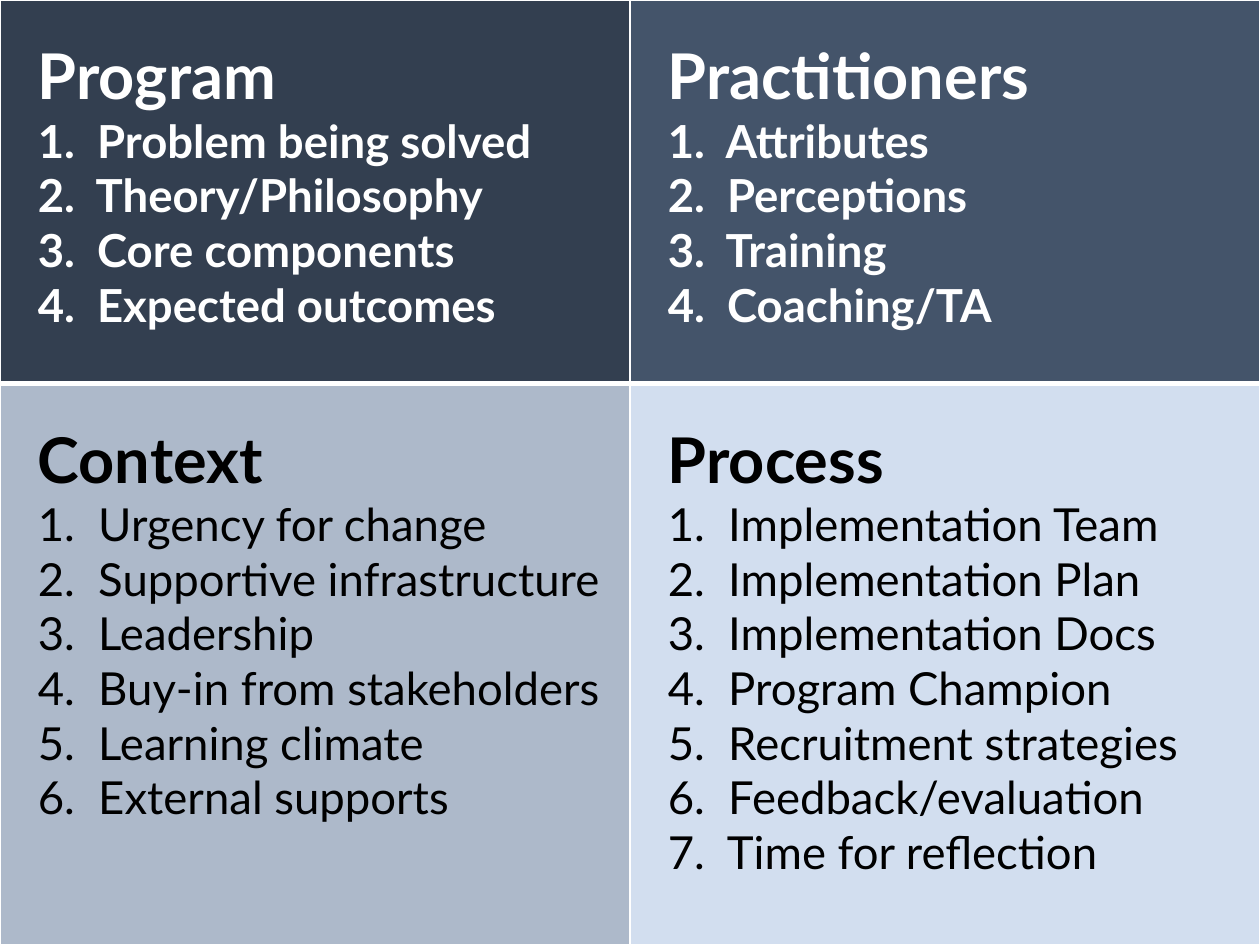
from lxml.etree import SubElement
from pptx import Presentation
from pptx.dml.color import RGBColor
from pptx.oxml.ns import qn
from pptx.util import Pt

WHITE = RGBColor(0xFF, 0xFF, 0xFF)
BLACK = RGBColor(0x00, 0x00, 0x00)
NAVY = RGBColor(0x33, 0x3F, 0x50)
SLATE = RGBColor(0x44, 0x54, 0x6A)
GREY_BLUE = RGBColor(0xAD, 0xB9, 0xCA)
PALE_BLUE = RGBColor(0xD2, 0xDE, 0xEF)

FONT = "Lato"
SLIDE_WIDTH, SLIDE_HEIGHT = 720, 540
ROW_HEIGHTS = (219, 321)
THIN, THICK = 1, 3

# Each quadrant: heading, items, fill, text colour, bold items
QUADRANTS = [
    [
        ("Program",
         ["Problem being solved", "Theory/Philosophy", "Core components",
          "Expected outcomes"],
         NAVY, WHITE, True),
        ("Practitioners",
         ["Attributes", "Perceptions", "Training", "Coaching/TA"],
         SLATE, WHITE, True),
    ],
    [
        ("Context",
         ["Urgency for change", "Supportive infrastructure", "Leadership",
          "Buy-in from stakeholders", "Learning climate", "External supports"],
         GREY_BLUE, BLACK, False),
        ("Process",
         ["Implementation Team", "Implementation Plan", "Implementation Docs",
          "Program Champion", "Recruitment strategies", "Feedback/evaluation",
          "Time for reflection"],
         PALE_BLUE, BLACK, False),
    ],
]


def write_text(paragraph, text, *, size, color, bold=False):
    run = paragraph.add_run()
    run.text = text
    run.font.name = FONT
    run.font.size = Pt(size)
    run.font.bold = bold
    run.font.color.rgb = color


def set_borders(cell, **widths):
    """Draw white cell borders; the schema wants them before the fill."""
    properties = cell._tc.get_or_add_tcPr()
    for position, (side, width) in enumerate(widths.items()):
        line = SubElement(properties, qn(f"a:ln{side}"), w=str(Pt(width)))
        fill = SubElement(line, qn("a:solidFill"))
        SubElement(fill, qn("a:srgbClr"), val=str(WHITE))
        properties.insert(position, line)


def fill_quadrant(cell, heading, items, fill, color, bold_items):
    cell.fill.solid()
    cell.fill.fore_color.rgb = fill
    cell.margin_left = cell.margin_top = Pt(21.6)
    cell.margin_right = Pt(7.2)
    cell.margin_bottom = Pt(3.6)

    # Heading, then the numbered items
    frame = cell.text_frame
    write_text(frame.paragraphs[0], heading, size=36, color=color, bold=True)
    for number, item in enumerate(items, 1):
        write_text(frame.add_paragraph(), f"{number}.  {item}",
                   size=26, color=color, bold=bold_items)


def add_quadrant_table(slide, left, top, width, height):
    table = slide.shapes.add_table(
        2, 2, Pt(left), Pt(top), Pt(width), Pt(height)).table
    table.first_row = table.horz_banding = False
    for column in table.columns:
        column.width = Pt(width / 2)
    for r, row in enumerate(QUADRANTS):
        table.rows[r].height = Pt(ROW_HEIGHTS[r])
        for c, quadrant in enumerate(row):
            cell = table.cell(r, c)
            fill_quadrant(cell, *quadrant)
            # The rule between the two rows is thicker
            set_borders(cell, L=THIN, R=THIN,
                        T=THICK if r == 1 else THIN,
                        B=THICK if r == 0 else THIN)


def main():
    deck = Presentation()
    deck.slide_width, deck.slide_height = Pt(SLIDE_WIDTH), Pt(SLIDE_HEIGHT)
    slide = deck.slides.add_slide(deck.slide_layouts[6])
    add_quadrant_table(slide, 0, 0, SLIDE_WIDTH, SLIDE_HEIGHT)
    deck.save("out.pptx")


if __name__ == "__main__":
    main()
